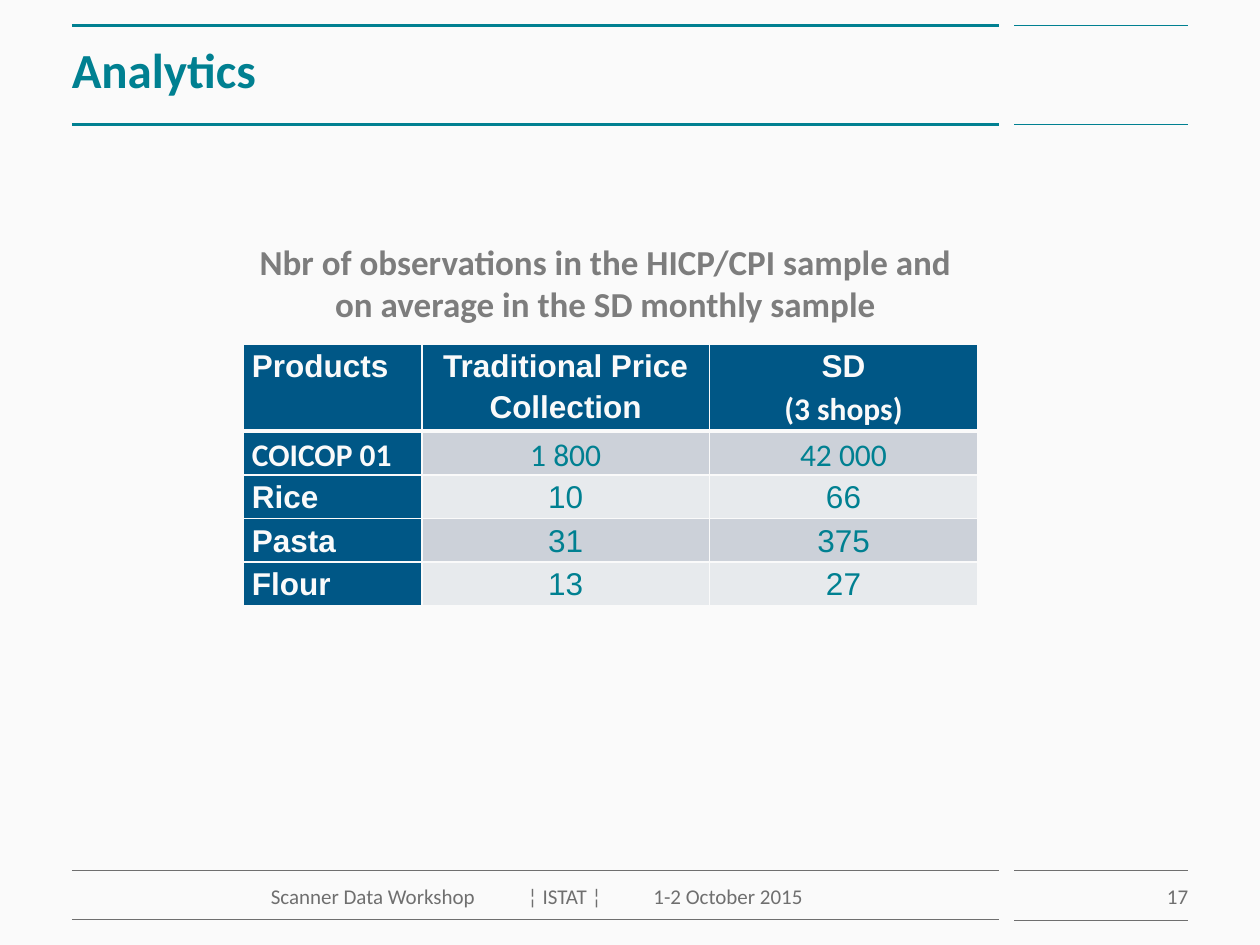
from lxml.etree import SubElement
from pptx import Presentation
from pptx.dml.color import RGBColor
from pptx.enum.shapes import MSO_CONNECTOR
from pptx.enum.text import MSO_ANCHOR, PP_ALIGN
from pptx.oxml.ns import qn
from pptx.util import Inches, Pt

PAPER = RGBColor(0xFA, 0xFA, 0xFA)
TEAL = RGBColor(0x00, 0x80, 0x91)
NAVY = RGBColor(0x00, 0x57, 0x86)
GREY = RGBColor(0x6F, 0x6F, 0x6F)
MID = RGBColor(0x7D, 0x7D, 0x7D)
BANDS = [RGBColor(0xCC, 0xD1, 0xD9), RGBColor(0xE7, 0xEA, 0xED)]

HEAD = ["Products", "Traditional Price Collection", "SD\n(3 shops)"]
ROWS = [
    ["COICOP 01", "1 800", "42 000"],
    ["Rice", "10", "66"],
    ["Pasta", "31", "375"],
    ["Flour", "13", "27"],
]
WIDTHS = [1.42, 2.28, 2.13]
HEIGHTS = [0.67, 0.35, 0.32, 0.32, 0.32]


def write(frame, text, size=12, font="Calibri", color=GREY, bold=False,
          align=PP_ALIGN.LEFT, space=None):
    """Fill a text frame, one paragraph to each line of text."""
    for i, line in enumerate(text.split("\n")):
        para = frame.add_paragraph() if i else frame.paragraphs[0]
        para.alignment = align
        if space:
            para.line_spacing = space
        run = para.add_run()
        run.text = line
        run.font.size = Pt(size)
        run.font.name = font
        run.font.bold = bold
        run.font.color.rgb = color


def edge(cell, side, width):
    """Draw one border of a cell; side is L, R, T or B."""
    line = SubElement(cell._tc.get_or_add_tcPr(), qn("a:ln" + side), w=str(Pt(width)))
    fill = SubElement(line, qn("a:solidFill"))
    SubElement(fill, qn("a:srgbClr"), val=str(PAPER))


class Deck:
    """Holds the style and the current slide."""

    def __init__(self):
        self.show = Presentation()
        self.show.slide_width = Inches(10)
        self.show.slide_height = Inches(7.5)
        self.slide = self.show.slides.add_slide(self.show.slide_layouts[6])
        fill = self.slide.background.fill
        fill.solid()
        fill.fore_color.rgb = PAPER

    def rule(self, left, right, top, color, width):
        line = self.slide.shapes.add_connector(
            MSO_CONNECTOR.STRAIGHT, Inches(left), Inches(top), Inches(right), Inches(top))
        line.line.color.rgb = color
        line.line.width = Pt(width)
        SubElement(line._element.spPr, qn("a:effectLst"))

    def text(self, box, text, pads=(0, 0.1, 0, 0), anchor=MSO_ANCHOR.TOP, **style):
        """Add a text box; pads are left, top, right, bottom."""
        frame = self.slide.shapes.add_textbox(*map(Inches, box)).text_frame
        frame.word_wrap = True
        frame.vertical_anchor = anchor
        (frame.margin_left, frame.margin_top,
         frame.margin_right, frame.margin_bottom) = map(Inches, pads)
        write(frame, text, **style)

    def cell(self, cell, text, row, col):
        cell.margin_left = cell.margin_right = Inches(0.07)
        cell.margin_top = cell.margin_bottom = 0
        for side in "LRTB":
            thick = (row, side) in [(0, "B"), (1, "T")]
            edge(cell, side, 3 if thick else 1)
        label = row == 0 or col == 0
        cell.fill.solid()
        cell.fill.fore_color.rgb = NAVY if label else BANDS[(row - 1) % 2]
        write(cell.text_frame, text, size=18, bold=label, space=1.15,
              font="Calibri" if row == 1 else "Arial",
              color=PAPER if label else TEAL,
              align=PP_ALIGN.CENTER if col else PP_ALIGN.LEFT)

    def table(self, left, top, data):
        table = self.slide.shapes.add_table(
            len(data), len(WIDTHS), Inches(left), Inches(top),
            Inches(sum(WIDTHS)), Inches(sum(HEIGHTS))).table
        for col, width in zip(table.columns, WIDTHS):
            col.width = Inches(width)
        for row, height in zip(table.rows, HEIGHTS):
            row.height = Inches(height)
        for r, line in enumerate(data):
            for c, text in enumerate(line):
                self.cell(table.cell(r, c), text, r, c)
        shops = table.cell(0, 2).text_frame.paragraphs[1]
        shops.runs[0].font.name = "Calibri"


def main():
    deck = Deck()
    for tops, color, wide, thin in [((0.2, 0.99), TEAL, 1.5, 0.75),
                                    ((6.91, 7.3), GREY, 0.75, 0.25)]:
        for top in tops:
            deck.rule(0.57, 7.93, top, color, wide)
            deck.rule(8.05, 9.43, top, color, thin)
    deck.text((0.57, 0.2, 7.36, 0.79), "Analytics", pads=(0, 0, 0, 0.1),
              anchor=MSO_ANCHOR.MIDDLE, size=28, color=TEAL, bold=True)
    deck.table(1.93, 2.73, [HEAD] + ROWS)
    deck.text((8.05, 6.91, 1.38, 0.39), "17", align=PP_ALIGN.RIGHT)
    deck.text((1.93, 1.86, 5.75, 0.77),
              "Nbr of observations in the HICP/CPI sample and "
              "on average in the SD monthly sample",
              pads=(0.1, 0.05, 0.1, 0.05), size=20, color=MID, bold=True,
              align=PP_ALIGN.CENTER)
    deck.text((0.59, 6.91, 7.34, 0.39),
              "Scanner Data Workshop\t ¦ ISTAT ¦\t 1-2 October 2015",
              align=PP_ALIGN.CENTER)
    deck.show.save("out.pptx")


if __name__ == "__main__":
    main()
